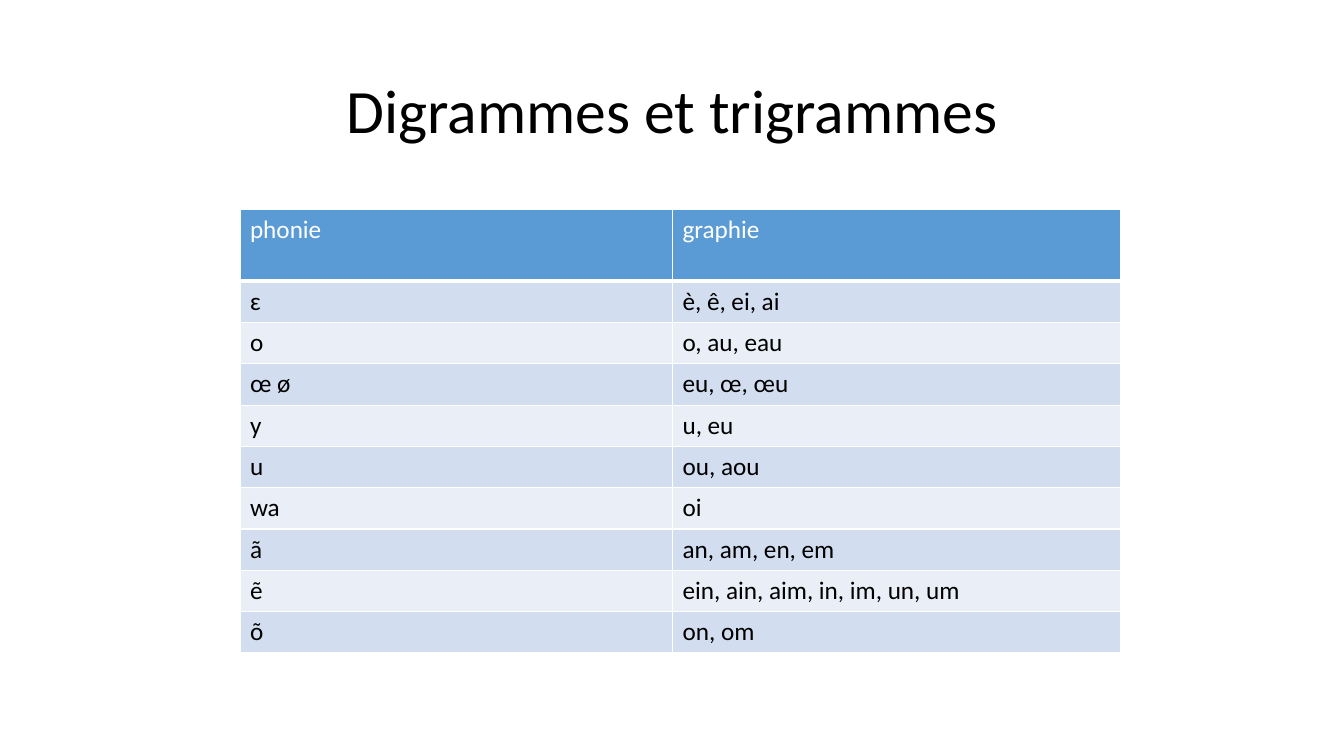
import pptx
import pptx.util
import pptx.dml.color
import pptx.enum.text
import lxml.etree
import pptx.oxml.ns

TITLE = "Digrammes et trigrammes"
ROWS = [
    ("phonie", "graphie"),
    ("ɛ", "è, ê, ei, ai"),
    ("o", "o, au, eau"),
    ("œ ø", "eu, œ, œu"),
    ("y", "u, eu"),
    ("u", "ou, aou"),
    ("wa", "oi"),
    ("ã", "an, am, en, em"),
    ("ẽ", "ein, ain, aim, in, im, un, um"),
    ("õ", "on, om"),
]

FONT = "Calibri"
BLACK = pptx.dml.color.RGBColor(0x00, 0x00, 0x00)
WHITE = pptx.dml.color.RGBColor(0xFF, 0xFF, 0xFF)
HEADER_BLUE = pptx.dml.color.RGBColor(0x5B, 0x9B, 0xD5)
BAND_DARK = pptx.dml.color.RGBColor(0xD2, 0xDE, 0xEF)
BAND_LIGHT = pptx.dml.color.RGBColor(0xEA, 0xEF, 0xF7)

WIDTH, HEIGHT = 13.33, 7.5
TITLE_BOX = (0.92, 0.4, 11.5, 1.45)
TABLE_LEFT, TABLE_TOP = 2.38, 2.08
COLUMN_WIDTHS = (4.29, 4.44)
ROW_HEIGHTS = [0.71] + [0.41] * (len(ROWS) - 1)


def add_span(para, text, size, color):
    span = para.add_run()
    span.text = text
    span.font.name = FONT
    span.font.size = pptx.util.Pt(size)
    span.font.bold = False
    span.font.color.rgb = color


def add_border(cell, side, points):
    qn = pptx.oxml.ns.qn
    properties = cell._tc.get_or_add_tcPr()
    line = lxml.etree.SubElement(properties, qn("a:" + side), w=str(pptx.util.Pt(points)))
    fill = lxml.etree.SubElement(line, qn("a:solidFill"))
    lxml.etree.SubElement(fill, qn("a:srgbClr"), val=str(WHITE))


def add_title(page):
    box = page.shapes.add_textbox(*map(pptx.util.Inches, TITLE_BOX))
    frame = box.text_frame
    frame.word_wrap = True
    frame.vertical_anchor = pptx.enum.text.MSO_ANCHOR.MIDDLE
    para = frame.paragraphs[0]
    para.alignment = pptx.enum.text.PP_ALIGN.CENTER
    para.line_spacing = 0.9
    add_span(para, TITLE, 44, BLACK)


def add_sounds_table(page):
    bounds = (TABLE_LEFT, TABLE_TOP, sum(COLUMN_WIDTHS), sum(ROW_HEIGHTS))
    table = page.shapes.add_table(
        len(ROWS), len(COLUMN_WIDTHS), *map(pptx.util.Inches, bounds)
    ).table
    for column, width in zip(table.columns, COLUMN_WIDTHS):
        column.width = pptx.util.Inches(width)
    for index, (texts, height) in enumerate(zip(ROWS, ROW_HEIGHTS)):
        table.rows[index].height = pptx.util.Inches(height)
        is_header = index == 0
        band = HEADER_BLUE if is_header else (BAND_LIGHT, BAND_DARK)[index % 2]
        for cell, text in zip(table.rows[index].cells, texts):
            for side in ("lnL", "lnR", "lnT", "lnB"):
                add_border(cell, side, 3 if is_header and side == "lnB" else 1)
            cell.fill.solid()
            cell.fill.fore_color.rgb = band
            para = cell.text_frame.paragraphs[0]
            add_span(para, text, 18, WHITE if is_header else BLACK)


def main():
    deck = pptx.Presentation()
    deck.slide_width = pptx.util.Inches(WIDTH)
    deck.slide_height = pptx.util.Inches(HEIGHT)
    page = deck.slides.add_slide(deck.slide_layouts[6])
    add_title(page)
    add_sounds_table(page)
    deck.save("out.pptx")


if __name__ == "__main__":
    main()
